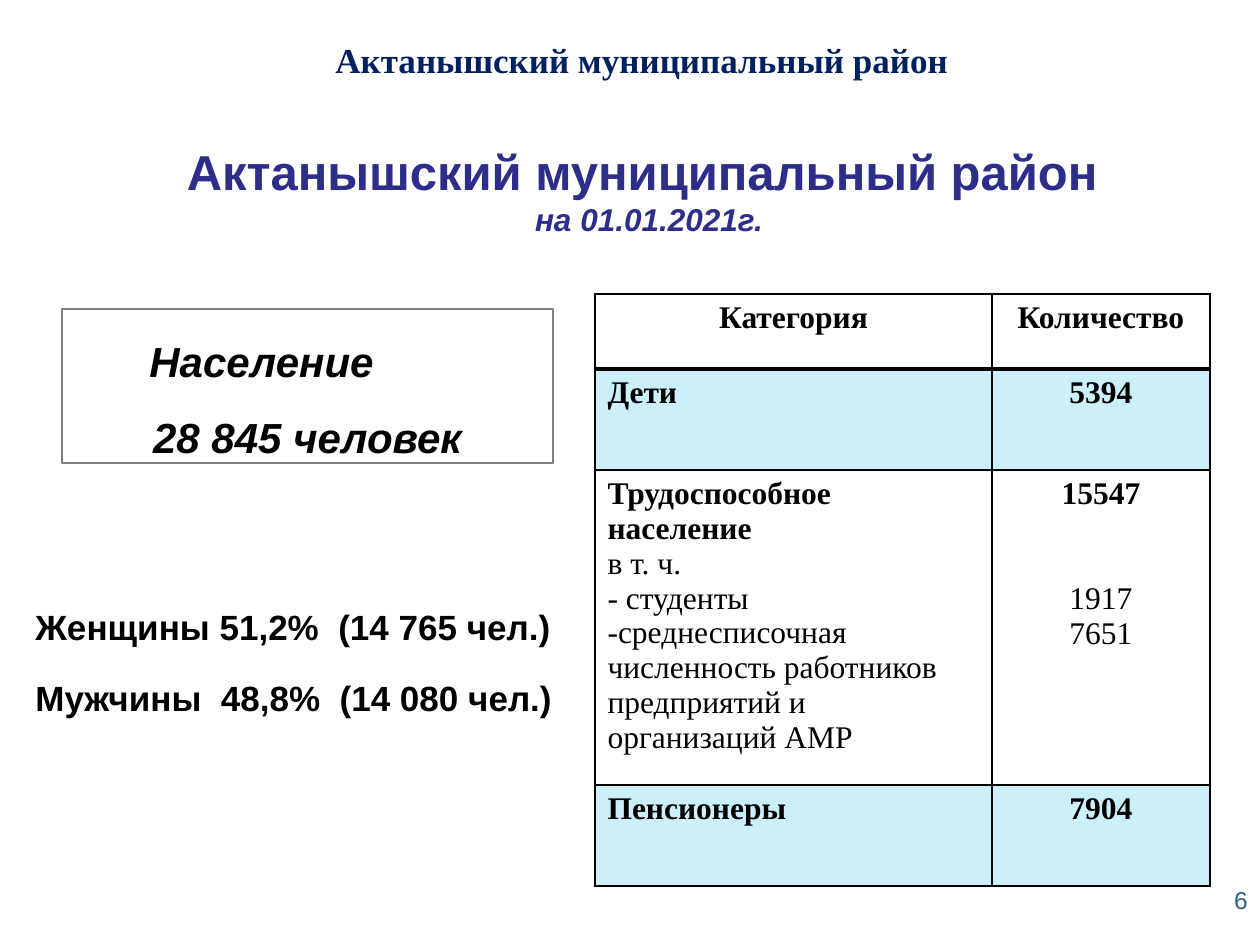
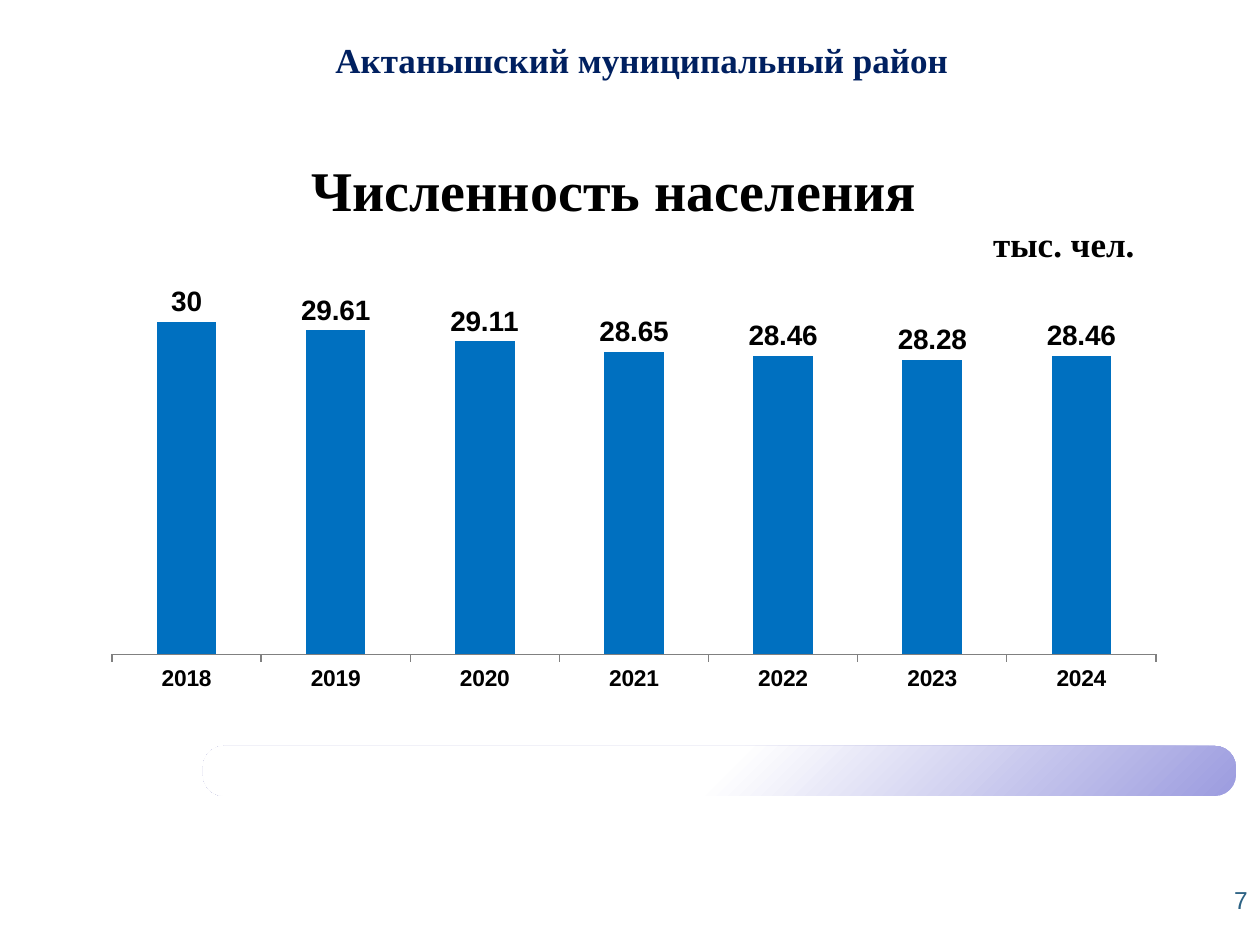
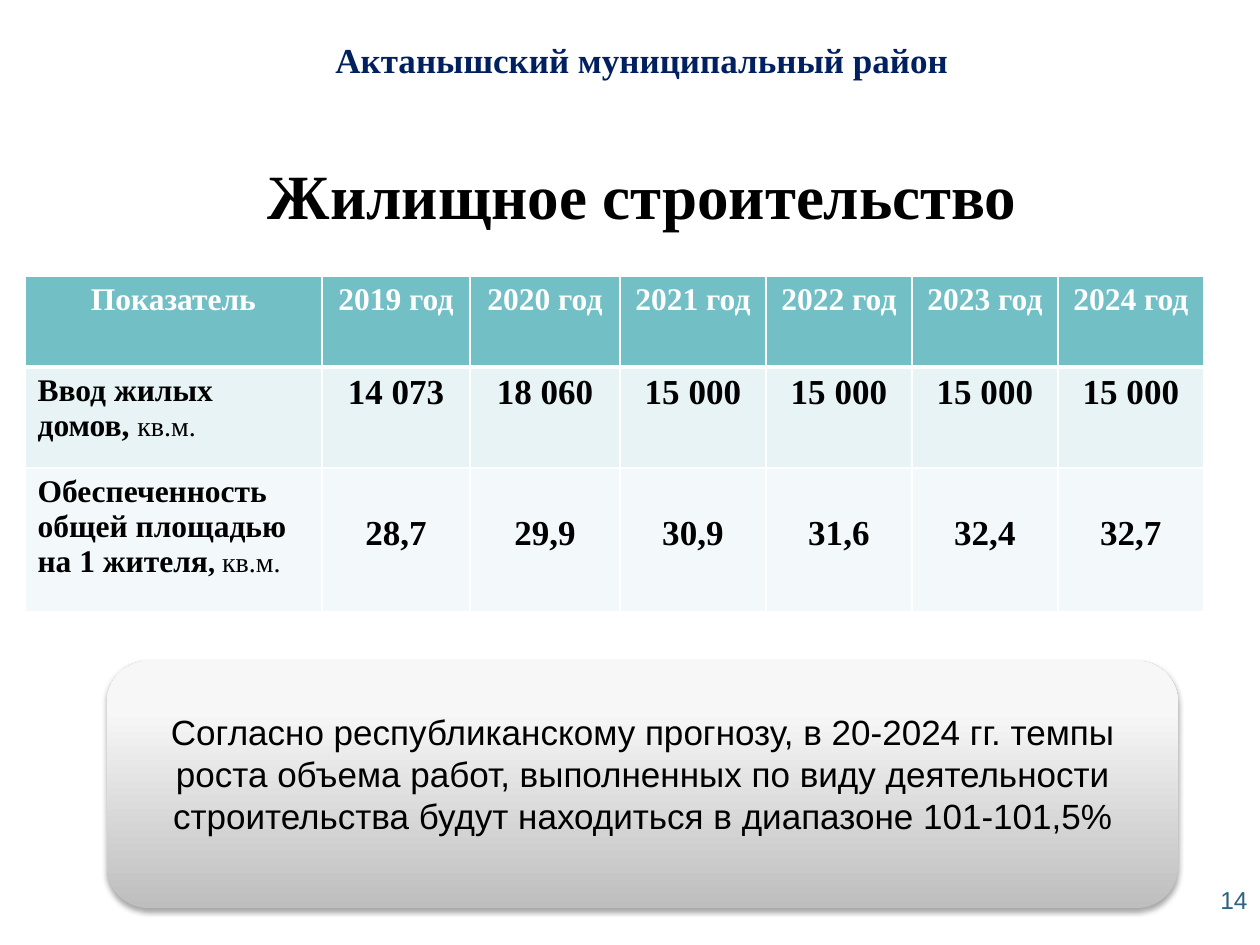
from dataclasses import dataclass, replace

from lxml.etree import SubElement
from pptx import Presentation
from pptx.chart.data import CategoryChartData
from pptx.dml.color import RGBColor
from pptx.enum.chart import XL_CHART_TYPE, XL_LABEL_POSITION, XL_TICK_LABEL_POSITION, XL_TICK_MARK
from pptx.enum.shapes import MSO_SHAPE
from pptx.enum.text import MSO_ANCHOR, PP_ALIGN
from pptx.oxml import parse_xml
from pptx.oxml.ns import nsdecls, qn
from pptx.util import Emu, Pt

EMU_PER_PX = 914400 / 126
COLORS = {
    "black": "000000",
    "white": "FFFFFF",
    "header": "002060",
    "title": "2D2D8A",
    "page": "2C6284",
    "frame": "808080",
    "sky": "00B0F0",
    "bar": "0070C0",
    "teal": "72BFC5",
    "teal_light": "E7F3F4",
    "teal_pale": "F3F9FA",
    "lilac": "9C9CDF",
    "silver": "BEBEBE",
    "mist": "F7F7F7",
    "mist_light": "F8F8F8",
}
SERIF = "Times New Roman"
SANS = "Arial"
LEFT, CENTER, RIGHT = PP_ALIGN.LEFT, PP_ALIGN.CENTER, PP_ALIGN.RIGHT
BREAK = "\n"


@dataclass(frozen=True)
class Style:
    size: int
    face: str = SERIF
    color: str = "black"
    bold: bool = True
    italic: bool = False


@dataclass
class Line:
    chunks: list
    align: int = LEFT
    before: int = 0
    spacing: float = 1.0
    indent: int = 0


CELL = Style(18)
CELL_PLAIN = replace(CELL, bold=False)
CELL_HEAD = replace(CELL, color="white")
FIGURE = Style(20)
UNIT_BOLD = Style(16)
UNIT = replace(UNIT_BOLD, bold=False)


def px(length):
    return Emu(round(length * EMU_PER_PX))


def box(*lengths):
    return [px(length) for length in lengths]


def rgb(name):
    return RGBColor.from_string(COLORS[name])


def line(text, style, align=LEFT, **spacing):
    return Line([(text, style)], align, **spacing)


def apply_style(font, style):
    font.size = Pt(style.size)
    font.name = style.face
    font.bold = style.bold
    font.italic = style.italic
    font.color.rgb = rgb(style.color)


def write(frame, lines):
    frame.word_wrap = True
    for index, content in enumerate(lines):
        paragraph = frame.paragraphs[0] if index == 0 else frame.add_paragraph()
        paragraph.alignment = content.align
        if content.spacing != 1:
            paragraph.line_spacing = content.spacing
        if content.before:
            paragraph.space_before = Pt(content.before)
        if content.indent:
            paragraph._p.get_or_add_pPr().set("marL", str(px(content.indent)))
        shared = len({style for _, style in content.chunks}) == 1
        if shared:
            apply_style(paragraph.font, content.chunks[0][1])
        for text, style in content.chunks:
            if text == BREAK:
                paragraph.add_line_break()
                continue
            run = paragraph.add_run()
            run.text = text
            if not shared:
                apply_style(run.font, style)


def add_text(slide, place, *lines):
    write(slide.shapes.add_textbox(*box(*place)).text_frame, lines)


def add_panel(slide, kind, place):
    panel = slide.shapes.add_shape(kind, *box(*place))
    panel.shadow.inherit = False
    panel.line.fill.background()
    return panel


def fill_solid(fill, properties, color, opacity=100):
    fill.solid()
    fill.fore_color.rgb = rgb(color)
    if opacity < 100:
        tint = properties.find(qn("a:solidFill")).find(qn("a:srgbClr"))
        SubElement(tint, qn("a:alpha")).set("val", str(opacity * 1000))


def fill_gradient(panel, stops, angle):
    panel.fill.gradient()
    gradient = panel._element.spPr.find(qn("a:gradFill"))
    for child in list(gradient):
        gradient.remove(child)
    stop_list = SubElement(gradient, qn("a:gsLst"))
    for position, color in stops:
        stop = SubElement(stop_list, qn("a:gs"), pos=str(position * 1000))
        SubElement(stop, qn("a:srgbClr"), val=COLORS[color])
    SubElement(gradient, qn("a:lin"), ang=str(angle * 60000), scaled="0")


def add_soft_shadow(panel):
    effects = panel._element.spPr.find(qn("a:effectLst"))
    effects.append(parse_xml(
        f'<a:outerShdw {nsdecls("a")} blurRad="40000" dist="23000" dir="5400000" rotWithShape="0">'
        f'<a:srgbClr val="{COLORS["black"]}"><a:alpha val="35000"/></a:srgbClr></a:outerShdw>'))


def set_borders(cell, color, top, bottom):
    properties = cell._tc.get_or_add_tcPr()
    widths = {"lnL": 1, "lnR": 1, "lnT": top, "lnB": bottom}
    for index, (side, width) in enumerate(widths.items()):
        properties.insert(index, parse_xml(
            f'<a:{side} {nsdecls("a")} w="{Pt(width)}"><a:solidFill>'
            f'<a:srgbClr val="{COLORS[color]}"/></a:solidFill></a:{side}>'))


def add_grid(slide, corner, widths, heights, rows, fills, border, head_rule):
    place = box(*corner, sum(widths), sum(heights))
    grid = slide.shapes.add_table(len(rows), len(widths), *place).table
    grid.first_row = False
    grid.horz_banding = False
    for column, width in zip(grid.columns, widths):
        column.width = px(width)
    for r, (height, entries, row_fill) in enumerate(zip(heights, rows, fills)):
        grid.rows[r].height = px(height)
        for c, lines in enumerate(entries):
            cell = grid.cell(r, c)
            write(cell.text_frame, lines)
            if row_fill:
                fill_solid(cell.fill, cell._tc.get_or_add_tcPr(), *row_fill)
            else:
                cell.fill.background()
            set_borders(cell, border, head_rule if r == 1 else 1, head_rule if r == 0 else 1)
    return grid


def add_page(deck, number):
    slide = deck.slides.add_slide(deck.slide_layouts[6])
    add_text(slide, (323, 32, 912, 55),
             line("Актанышский муниципальный район", Style(20, color="header")))
    add_text(slide, (966, 879, 294, 66),
             line(str(number), Style(14, SANS, "page", bold=False), RIGHT))
    return slide


def add_population_chart(slide):
    data = CategoryChartData()
    data.categories = [str(year) for year in range(2018, 2025)]
    data.add_series("Series 1", [30, 29.61, 29.11, 28.65, 28.46, 28.28, 28.46])
    chart = slide.shapes.add_chart(
        XL_CHART_TYPE.COLUMN_CLUSTERED, *box(101, 267, 1099, 467), data).chart
    chart.has_legend = False
    chart.has_title = False
    apply_style(chart.font, Style(12, SANS, bold=False))

    years = chart.category_axis
    years.major_tick_mark = XL_TICK_MARK.OUTSIDE
    years.tick_label_position = XL_TICK_LABEL_POSITION.LOW
    years.has_major_gridlines = False
    years.format.line.color.rgb = rgb("frame")
    apply_style(years.tick_labels.font, Style(13, SANS))

    people = chart.value_axis
    people.visible = False
    people.has_major_gridlines = False
    people.minimum_scale = 15
    people.maximum_scale = 31

    plot = chart.plots[0]
    plot.gap_width = 150
    plot.vary_by_categories = False
    bars = plot.series[0]
    bars.format.fill.solid()
    bars.format.fill.fore_color.rgb = rgb("bar")
    labels = bars.data_labels
    labels.show_value = True
    labels.position = XL_LABEL_POSITION.OUTSIDE_END
    apply_style(labels.font, Style(16, SANS))

    area = chart._chartSpace.chart.plotArea
    for old in area.findall(qn("c:layout")):
        area.remove(old)
    sizes = {"x": 0.01, "y": 0.07, "w": 0.95, "h": 0.76}
    marks = '<c:layoutTarget val="inner"/><c:xMode val="edge"/><c:yMode val="edge"/>'
    marks += "".join(f'<c:{key} val="{value}"/>' for key, value in sizes.items())
    area.insert(0, parse_xml(
        f'<c:layout {nsdecls("c")}><c:manualLayout>{marks}</c:manualLayout></c:layout>'))


def build_population(deck):
    slide = add_page(deck, 6)
    gender = Style(20, SANS)
    add_text(slide, (23, 578, 568, 178),
             line("Женщины 51,2%  (14 765 чел.)", gender, spacing=1.5),
             line("Мужчины  48,8%  (14 080 чел.)", gender, spacing=1.5, before=5))

    total = add_panel(slide, MSO_SHAPE.RECTANGLE, (62, 309, 491, 154))
    fill_solid(total.fill, total._element.spPr, "white", 50)
    total.line.color.rgb = rgb("frame")
    total.line.width = Pt(0.75)
    total.text_frame.margin_top = total.text_frame.margin_bottom = px(5)
    total.text_frame.vertical_anchor = MSO_ANCHOR.MIDDLE
    headline = Style(24, SANS, italic=True)
    write(total.text_frame, [
        line("Население", headline, spacing=1.5, indent=75),
        line("28 845 человек", headline, CENTER, spacing=1.5),
    ])

    district = Style(28, SANS, "title")
    add_text(slide, (74, 135, 1150, 139), Line([
        ("Актанышский муниципальный район ", district),
        (BREAK, district),
        ("на 01.01.2021г.", replace(district, size=18, italic=True)),
    ], CENTER))

    workers = ["в т. ч.", "- студенты",
               "-среднесписочная численность работников предприятий и организаций АМР"]
    rows = [
        [[line("Категория", CELL, CENTER)], [line("Количество", CELL, CENTER)]],
        [[line("Дети", CELL)], [line("5394", CELL, CENTER)]],
        [[line("Трудоспособное население", CELL)] + [line(text, CELL_PLAIN) for text in workers],
         [line("15547", CELL, CENTER),
          line("1917", CELL_PLAIN, CENTER, before=40),
          line("7651", CELL_PLAIN, CENTER)]],
        [[line("Пенсионеры", CELL)], [line("7904", CELL, CENTER)]],
    ]
    sky = ("sky", 20)
    add_grid(slide, (595, 294), [397, 218], [75, 101, 315, 101], rows,
             [None, sky, None, sky], "black", 2)


def build_headcount(deck):
    slide = add_page(deck, 7)
    add_population_chart(slide)
    add_text(slide, (95, 149, 1052, 123),
             line("Численность населения ", Style(32), CENTER),
             line("тыс. чел.", Style(20), RIGHT))
    ribbon = add_panel(slide, MSO_SHAPE.ROUNDED_RECTANGLE, (203, 746, 1033, 50))
    ribbon.adjustments[0] = 0.42
    fill_gradient(ribbon, [(0, "lilac"), (50, "white"), (100, "white")], 225)


def build_housing(deck):
    slide = add_page(deck, 14)
    outlook = add_panel(slide, MSO_SHAPE.ROUNDED_RECTANGLE, (107, 661, 1071, 247))
    fill_gradient(outlook, [(0, "silver"), (80, "mist"), (100, "mist_light")], 270)
    add_soft_shadow(outlook)
    add_text(slide, (81, 150, 1123, 105), line("Жилищное строительство", Style(36), CENTER))

    built = ["14 073", "18 060"] + ["15 000"] * 4
    provided = ["28,7", "29,9", "30,9", "31,6", "32,4", "32,7"]
    headings = ["Показатель"] + [f"{year} год" for year in range(2019, 2025)]
    rows = [
        [[line(heading, CELL_HEAD, CENTER)] for heading in headings],
        [[Line([("Ввод жилых домов, ", CELL), ("кв.м.", UNIT)])]]
        + [[line(area, FIGURE, CENTER)] for area in built],
        [[Line([("Обеспеченность общей площадью на 1 жителя", CELL),
                (", ", UNIT_BOLD), ("кв.м.", UNIT)])]]
        + [[line(area, FIGURE, CENTER)] for area in provided],
    ]
    grid = add_grid(slide, (25, 276), [297, 148, 150] + [146] * 4, [91, 101, 144], rows,
                    [("teal",), ("teal_light",), ("teal_pale",)], "white", 3)
    for column in range(1, len(headings)):
        grid.cell(2, column).margin_top = px(46)

    add_text(slide, (122, 704, 1042, 140), line(
        "Согласно республиканскому прогнозу, в 20-2024 гг. темпы роста объема работ, "
        "выполненных по виду деятельности строительства будут находиться "
        "в диапазоне 101-101,5%", Style(20, SANS, bold=False), CENTER))


def main():
    deck = Presentation()
    deck.slide_width, deck.slide_height = box(1260, 945)
    build_population(deck)
    build_headcount(deck)
    build_housing(deck)
    deck.save("out.pptx")


if __name__ == "__main__":
    main()
